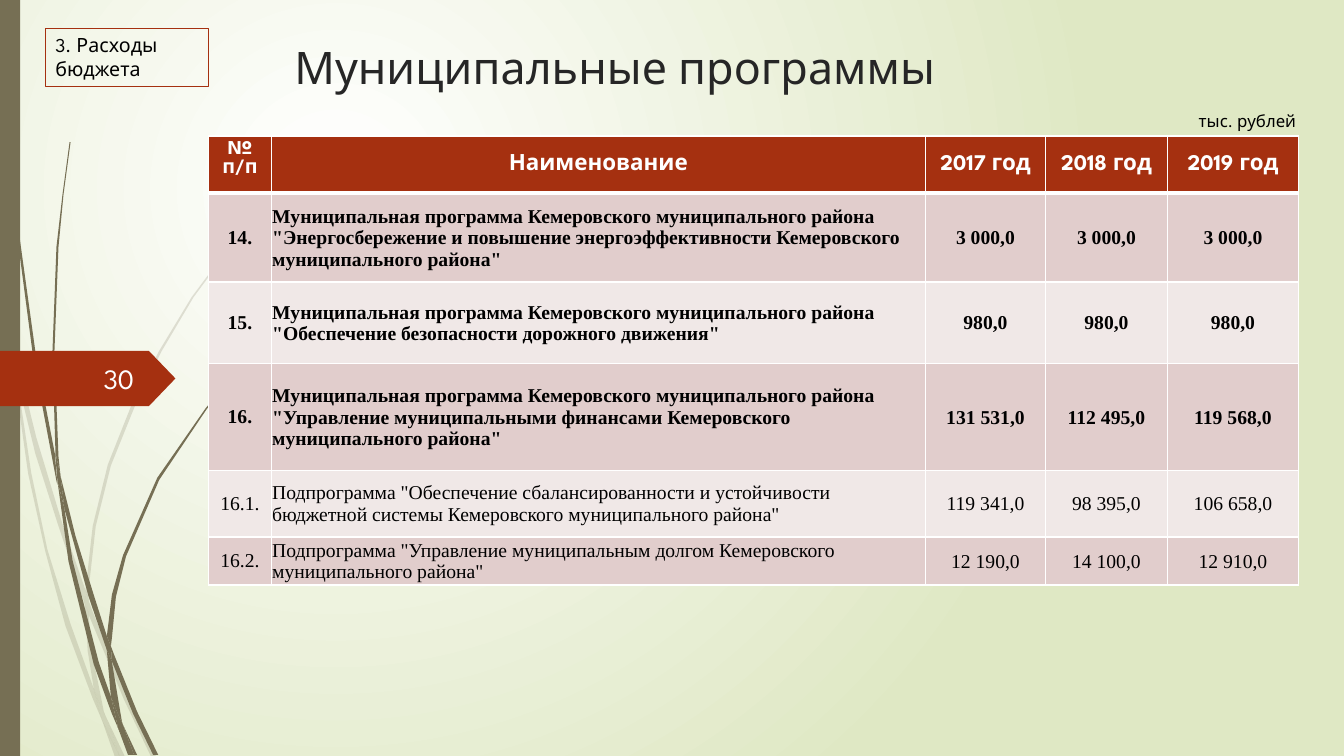
from copy import deepcopy

from lxml.etree import SubElement
from pptx import Presentation
from pptx.dml.color import RGBColor
from pptx.enum.shapes import MSO_SHAPE
from pptx.enum.text import MSO_ANCHOR, PP_ALIGN
from pptx.oxml import parse_xml
from pptx.oxml.ns import nsdecls, qn
from pptx.util import Inches, Pt

COLORS = {"olive": "766F54", "rust": "A53010", "white": "FFFFFF", "meadow": "DFE8C4",
          "title": "262626", "black": "000000", "number": "FEFFFF",
          "band_dark": "E1CDCC", "band_light": "F0E8E7"}
HEADING_FONT = "League Spartan"
BODY_FONT = "Times New Roman"

FAINT_BLADES = [
    [(0.11, 3.5), (0.09, 3.22), (0, 2.82), (0, 2.99), (0.1, 3.44)],
    [(0.58, 5.22), (0.84, 5.99), (0.85, 5.86), (0.62, 5.2), (0.36, 4.34), (0.14, 3.45),
     (0.17, 3.76), (0.35, 4.5)],
    [(0.92, 6.07), (0.88, 5.96), (0.88, 6.1), (1.23, 6.94), (1.5, 7.51), (1.55, 7.51),
     (1.27, 6.92)],
    [(1.19, 7.51), (1.24, 7.51), (1.05, 7.11)],
    [(0.93, 6.83), (0.7, 6.19), (0.47, 5.45), (0.31, 4.69), (0.17, 3.76), (0.11, 3.5),
     (0.28, 4.7), (0.45, 5.47), (0.65, 6.21), (0.92, 6.93), (1.01, 7.14), (0.99, 7.07)],
    [(0.84, 5.99), (0.87, 6.46), (0.93, 6.83), (0.96, 6.92), (1.05, 7.11), (1.03, 7.06),
     (0.91, 6.46), (0.88, 6.1), (0.88, 6.08)],
    [(0.88, 5.84), (0.95, 5.22), (1.1, 4.62), (1.33, 4.05), (1.6, 3.49), (1.92, 2.95),
     (2.29, 2.45), (2.68, 1.98), (2.9, 1.75), (3.12, 1.54), (3.12, 1.53), (2.89, 1.75),
     (2.68, 1.97), (2.28, 2.44), (1.9, 2.95), (1.58, 3.48), (1.3, 4.03), (1.07, 4.61),
     (0.92, 5.22), (0.85, 5.84), (0.85, 5.86), (0.88, 5.96)],
    [(1.01, 7.14), (1.14, 7.51), (1.19, 7.51)],
    [(0.88, 6.08), (0.88, 6.1), (0.88, 5.96), (0.85, 5.86), (0.84, 5.99)],
    [(0.96, 6.92), (0.93, 6.83), (0.99, 7.07), (1.01, 7.14), (1.19, 7.51), (1.05, 7.11)],
]
DARK_BLADES = [
    [(0.07, 1.1), (0.17, 2.33), (0.33, 3.55), (0.56, 4.77), (0.57, 4.81), (0.55, 4.57),
     (0.55, 4.53), (0.36, 3.55), (0.19, 2.32), (0.08, 1.09), (0.05, 0.48), (0.04, 0),
     (0.03, 0), (0.04, 0.48)],
    [(0.88, 5.92), (1.06, 6.45), (1.06, 6.31), (0.93, 5.9), (0.75, 5.32), (0.6, 4.72),
     (0.64, 5.05)],
    [(1.13, 6.49), (1.1, 6.41), (1.11, 6.56), (1.32, 7.08), (1.52, 7.49), (1.57, 7.49),
     (1.36, 7.06)],
    [(1.1, 6.91), (0.98, 6.57), (0.72, 5.56), (0.64, 5.05), (0.57, 4.77), (0.68, 5.57),
     (0.93, 6.59), (1.11, 7.08), (1.17, 7.22), (1.16, 7.17)],
    [(0.6, 4.72), (0.58, 4.53), (0.54, 3.49), (0.58, 2.45), (0.63, 1.93), (0.7, 1.41),
     (0.69, 1.41), (0.62, 1.93), (0.56, 2.45), (0.52, 3.49), (0.55, 4.49)],
    [(1.33, 7.49), (1.36, 7.49), (1.22, 7.19)],
    [(0.57, 4.77), (0.64, 5.05), (0.6, 4.72), (0.55, 4.49), (0.55, 4.53)],
    [(1.11, 6.33), (1.15, 5.92), (1.25, 5.52), (1.58, 4.76), (2.05, 4.06), (2.31, 3.74),
     (2.61, 3.44), (2.6, 3.44), (2.31, 3.73), (2.04, 4.05), (1.56, 4.74), (1.22, 5.51),
     (1.11, 5.9), (1.06, 6.31), (1.1, 6.41)],
    [(1.17, 7.22), (1.27, 7.49), (1.31, 7.49)],
    [(1.06, 6.45), (1.1, 6.91), (1.16, 7.06), (1.22, 7.19), (1.21, 7.16), (1.11, 6.56)],
    [(1.06, 6.45), (1.11, 6.56), (1.1, 6.41), (1.06, 6.31)],
    [(1.16, 7.06), (1.1, 6.91), (1.16, 7.17), (1.17, 7.22), (1.3, 7.49), (1.33, 7.49),
     (1.22, 7.19)],
]

COLUMN_WIDTHS = [0.62, 6.49, 1.19, 1.21, 1.3]
ROW_HEIGHTS = [0.41, 0.88, 0.81, 1.06, 0.66, 0.41]
HEADER = ["№ п/п", "Наименование", "2017 год", "2018 год", "2019 год"]
PROGRAMS = [
    ["14.", 'Муниципальная программа Кемеровского муниципального района "Энергосбережение '
     'и повышение энергоэффективности Кемеровского муниципального района"',
     "3 000,0", "3 000,0", "3 000,0"],
    ["15.", 'Муниципальная программа Кемеровского муниципального района "Обеспечение '
     'безопасности дорожного движения"', "980,0", "980,0", "980,0"],
    ["16.", 'Муниципальная программа Кемеровского муниципального района "Управление '
     'муниципальными финансами Кемеровского муниципального района"',
     "131 531,0", "112 495,0", "119 568,0"],
    ["16.1.", 'Подпрограмма "Обеспечение сбалансированности и устойчивости бюджетной '
     'системы Кемеровского муниципального района"', "119 341,0", "98 395,0", "106 658,0"],
    ["16.2.", 'Подпрограмма "Управление муниципальным долгом Кемеровского '
     'муниципального района"', "12 190,0", "14 100,0", "12 910,0"],
]


def rgb(name):
    """Look up a palette colour."""
    return RGBColor.from_string(COLORS[name])


def write(frame, text, size, color, font=HEADING_FONT, align=PP_ALIGN.LEFT, bold=False):
    """Put one formatted run into a text frame, and end its paragraph in the same format."""
    frame.word_wrap = True
    paragraph = frame.paragraphs[0]
    paragraph.alignment = align
    run = paragraph.add_run()
    run.text = text
    run.font.size, run.font.name, run.font.bold = Pt(size), font, bold
    run.font.color.rgb = rgb(color)
    ending = SubElement(paragraph._p, qn("a:endParaRPr"), dict(run.font._rPr.attrib))
    ending.extend(deepcopy(list(run.font._rPr)))


def paint(shape, color):
    """Give a shape a flat fill with no line or shadow."""
    shape.shadow.inherit = False
    shape.fill.solid()
    shape.fill.fore_color.rgb = rgb(color)
    shape.line.fill.background()


def add_background(slide):
    """Fill the slide with a radial gradient."""
    slide.background.fill.solid()
    properties = slide.background._cSld.find(qn("p:bg")).find(qn("p:bgPr"))
    gradient = parse_xml(
        f'<a:gradFill {nsdecls("a")} rotWithShape="1"><a:gsLst>'
        f'<a:gs pos="0"><a:srgbClr val="{COLORS["white"]}"/></a:gs>'
        f'<a:gs pos="100000"><a:srgbClr val="{COLORS["meadow"]}"/></a:gs></a:gsLst>'
        '<a:path path="circle"><a:fillToRect l="50000" t="50000" r="100000" b="100000"/>'
        '</a:path></a:gradFill>')
    properties.replace(properties.find(qn("a:solidFill")), gradient)


def add_grass(slide, left, top, blades, opacity=100):
    """Draw grass blades relative to the given corner."""
    for outline in blades:
        points = [(Inches(left + x), Inches(top + y)) for x, y in outline]
        builder = slide.shapes.build_freeform(*points[0])
        builder.add_line_segments(points[1:], close=True)
        blade = builder.convert_to_shape()
        paint(blade, "olive")
        if opacity < 100:
            tint = blade.fill._xPr.find(qn("a:solidFill"))[0]
            SubElement(tint, qn("a:alpha")).set("val", str(opacity * 1000))


def add_side_bar(slide, left, top, width, height):
    """Draw the vertical bar on the slide edge."""
    paint(slide.shapes.add_shape(MSO_SHAPE.RECTANGLE, Inches(left), Inches(top),
                                 Inches(width), Inches(height)), "olive")


def add_page_badge(slide, left, top, width, height, number):
    """Draw the page arrow with its number."""
    arrow = slide.shapes.add_shape(MSO_SHAPE.PENTAGON, Inches(left), Inches(top),
                                   Inches(width), Inches(height))
    arrow.adjustments[0] = 0.48
    paint(arrow, "rust")
    label = slide.shapes.add_textbox(Inches(left + 0.58), Inches(top + 0.07),
                                     Inches(0.85), Inches(0.4))
    label.text_frame.vertical_anchor = MSO_ANCHOR.MIDDLE
    write(label.text_frame, number, 20, "number", align=PP_ALIGN.RIGHT)


def add_title(slide, left, top, width, height, text):
    """Place and format the title placeholder."""
    title = slide.shapes.title
    title.left, title.top = Inches(left), Inches(top)
    title.width, title.height = Inches(width), Inches(height)
    title.text_frame.vertical_anchor = MSO_ANCHOR.MIDDLE
    write(title.text_frame, text, 32, "title")


def add_label(slide, left, top, width, height, text, size, framed=False):
    """Add a small caption, with a thin frame if wanted."""
    label = slide.shapes.add_textbox(Inches(left), Inches(top), Inches(width), Inches(height))
    write(label.text_frame, text, size, "black")
    if framed:
        label.line.color.rgb = rgb("rust")
        label.line.width = Pt(0.75)


def style_cell(cell, fill, bottom_width=1):
    """Fill a cell and draw its white borders."""
    properties = cell._tc.get_or_add_tcPr()
    for side, width in (("L", 1), ("R", 1), ("T", 1), ("B", bottom_width)):
        properties.append(parse_xml(
            f'<a:ln{side} {nsdecls("a")} w="{Pt(width)}"><a:solidFill>'
            f'<a:srgbClr val="{COLORS["white"]}"/></a:solidFill></a:ln{side}>'))
    cell.fill.solid()
    cell.fill.fore_color.rgb = rgb(fill)


def add_programs_table(slide, left, top):
    """Build the table of municipal programs."""
    table = slide.shapes.add_table(
        len(ROW_HEIGHTS), len(COLUMN_WIDTHS), Inches(left), Inches(top),
        Inches(sum(COLUMN_WIDTHS)), Inches(sum(ROW_HEIGHTS))).table
    for column, width in zip(table.columns, COLUMN_WIDTHS):
        column.width = Inches(width)
    for row, height in zip(table.rows, ROW_HEIGHTS):
        row.height = Inches(height)
    for r, texts in enumerate([HEADER, *PROGRAMS]):
        is_subprogram = texts[1].startswith("Подпрограмма")
        for c, text in enumerate(texts):
            cell = table.cell(r, c)
            cell.vertical_anchor = MSO_ANCHOR.MIDDLE if r or c else MSO_ANCHOR.TOP
            if r == 0:
                style_cell(cell, "rust", bottom_width=3)
                write(cell.text_frame, text, 16 if c else 14, "white",
                      align=PP_ALIGN.CENTER, bold=True)
                continue
            style_cell(cell, "band_dark" if r % 2 else "band_light")
            if c:
                cell.margin_left = cell.margin_right = cell.margin_top = Inches(0.01)
                cell.margin_bottom = 0
            write(cell.text_frame, text, 14, "black", BODY_FONT,
                  PP_ALIGN.LEFT if c == 1 else PP_ALIGN.CENTER, not is_subprogram)


def main():
    """Build and save the slide."""
    deck = Presentation()
    deck.slide_width, deck.slide_height = Inches(13.33), Inches(7.5)
    slide = deck.slides.add_slide(deck.slide_layouts[5])
    add_background(slide)
    add_grass(slide, 0, 0, FAINT_BLADES, opacity=20)
    add_grass(slide, 0, 0, DARK_BLADES)
    add_side_bar(slide, 0, 0, 0.2, 7.5)
    add_page_badge(slide, 0, 3.48, 1.74, 0.55, "30")
    add_title(slide, 2.82, 0.28, 9.75, 0.77, "Муниципальные программы")
    add_programs_table(slide, 2.07, 1.35)
    add_label(slide, 11.79, 1.05, 1.3, 0.3, "тыс. рублей", 12)
    add_label(slide, 0.45, 0.28, 1.62, 0.58, "3. Расходы бюджета", 14, framed=True)
    deck.save("out.pptx")


if __name__ == "__main__":
    main()
